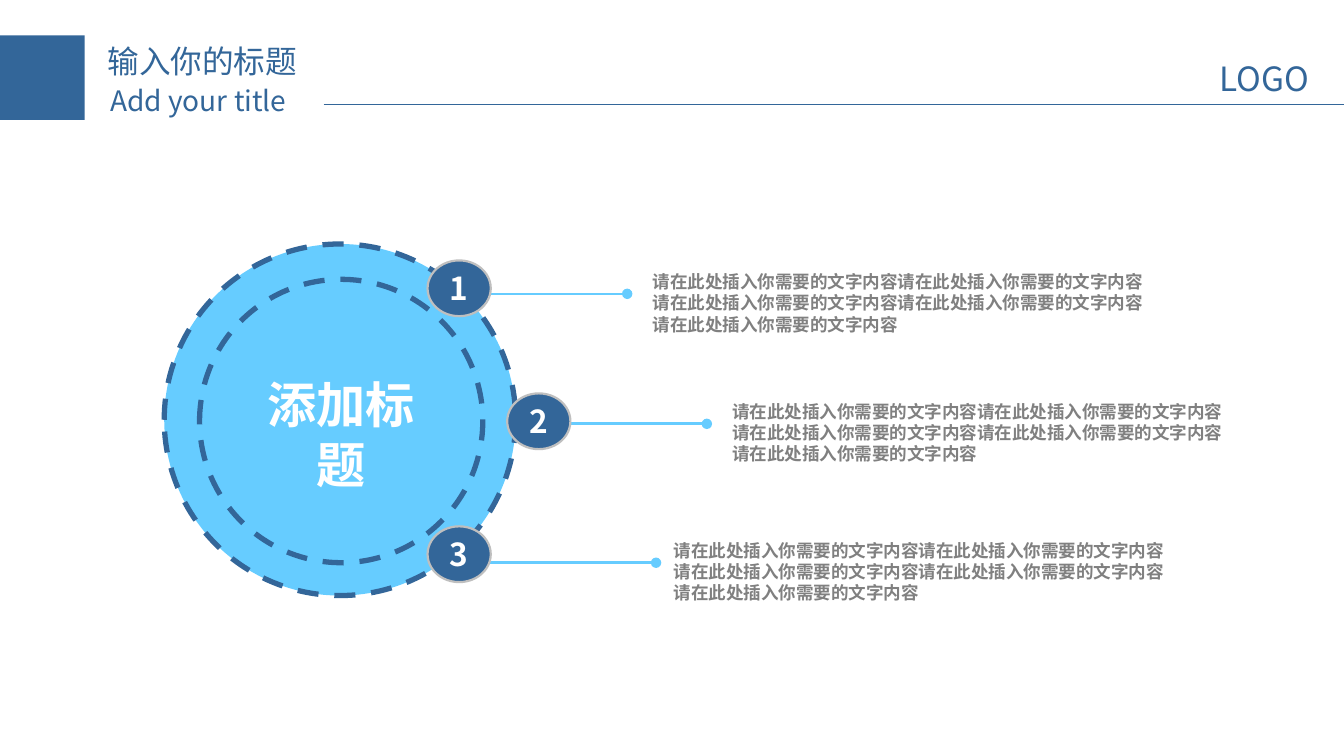
from pptx import Presentation, util as u
from pptx.dml.color import RGBColor
from pptx.enum import dml, shapes, text
from pptx.oxml.ns import qn
from lxml import etree

NAVY = RGBColor(0x33, 0x66, 0x99)
SKY = RGBColor(0x66, 0xCC, 0xFF)
GREY = RGBColor(0x80, 0x80, 0x80)
SILVER = RGBColor(0xBF, 0xBF, 0xBF)
WHITE = RGBColor(0xFF, 0xFF, 0xFF)

SLIDE_W, SLIDE_H = 27, 15
BADGE_W, BADGE_H = 1.27, 1.12
BODY = "请在此处插入你需要的文字内容" * 5

# badge left, badge top, line left, line right, line height, text left
ITEMS = [
    (8.59, 5.23, 8.71, 12.6, 5.9, 13.11),
    (10.19, 7.9, 10.31, 14.2, 8.51, 14.71),
    (8.59, 10.57, 9.3, 13.18, 11.3, 13.54),
]


class Deck:
    heading_font = "Noto Sans CJK SC"
    body_font = "Arial"

    def __init__(self, slide):
        self.shapes = slide.shapes

    def style(self, frame, words, size, color, font, bold=False, center=False):
        paragraph = frame.paragraphs[0]
        run = paragraph.add_run()
        run.text = words
        paragraph.font.size = u.Pt(size)
        paragraph.font.bold = bold
        paragraph.font.name = font
        paragraph.font.color.rgb = color
        # East Asian characters take their typeface from a separate element
        east_asian = etree.SubElement(run.font._element, qn("a:ea"))
        east_asian.set("typeface", self.heading_font)
        if center:
            paragraph.alignment = text.PP_ALIGN.CENTER
        return paragraph

    def label(self, words, left, top, width, height, size, color,
              font=heading_font, wrap=True, inset=True, leading=None, **looks):
        box = self.shapes.add_textbox(u.Cm(left), u.Cm(top), u.Cm(width), u.Cm(height))
        frame = box.text_frame
        frame.word_wrap = wrap
        if not inset:
            frame.margin_left = frame.margin_right = 0
            frame.margin_top = frame.margin_bottom = 0
        paragraph = self.style(frame, words, size, color, font, **looks)
        if leading:
            paragraph.line_spacing = u.Pt(leading)

    def shape(self, kind, left, top, width, height, fill=None,
              line=None, weight=0, dashed=False):
        item = self.shapes.add_shape(kind, u.Cm(left), u.Cm(top), u.Cm(width), u.Cm(height))
        item.shadow.inherit = False
        if fill is None:
            item.fill.background()
        else:
            item.fill.solid()
            item.fill.fore_color.rgb = fill
        if line is None:
            item.line.fill.background()
        else:
            item.line.color.rgb = line
            item.line.width = u.Pt(weight)
        if dashed:
            item.line.dash_style = dml.MSO_LINE.DASH
        return item

    def ring(self, left, top, size, fill=None):
        self.shape(shapes.MSO_SHAPE.OVAL, left, top, size, size, fill, NAVY, 3, dashed=True)

    def badge(self, number, left, top):
        oval = self.shape(shapes.MSO_SHAPE.OVAL, left, top, BADGE_W, BADGE_H,
                          NAVY, SILVER, 1.25)
        oval.text_frame.vertical_anchor = text.MSO_ANCHOR.MIDDLE
        self.style(oval.text_frame, str(number), 18, WHITE, self.heading_font,
                   bold=True, center=True)

    def rule(self, start, end, y, color, weight, dot=False):
        """Draw a horizontal line, with a round dot at its start if asked."""
        line = self.shapes.add_connector(shapes.MSO_CONNECTOR.STRAIGHT,
                                         u.Cm(start), u.Cm(y), u.Cm(end), u.Cm(y))
        line.line.color.rgb = color
        line.line.width = u.Pt(weight)
        if dot:
            head = etree.SubElement(line.line._get_or_add_ln(), qn("a:headEnd"))
            head.set("type", "oval")
        etree.SubElement(line._element.spPr, qn("a:effectLst"))


def main():
    prs = Presentation()
    prs.slide_width, prs.slide_height = u.Cm(SLIDE_W), u.Cm(SLIDE_H)
    deck = Deck(prs.slides.add_slide(prs.slide_layouts[6]))

    deck.shape(shapes.MSO_SHAPE.RECTANGLE, 0, 0.71, 1.7, 1.7, NAVY)
    deck.label("输入你的标题", 1.91, 0.71, 4.4, 1.02, 18, NAVY)
    deck.label("Add your title", 1.97, 1.55, 4.4, 0.94, 16, NAVY)
    deck.rule(6.5, SLIDE_W, 2.1, NAVY, 0.75)
    deck.label("LOGO", 24.25, 1.04, 2.44, 1.07, 19, NAVY, wrap=False)

    for _, _, line_left, line_right, y, _ in ITEMS:
        deck.rule(line_right, line_left, y, SKY, 1.5, dot=True)

    deck.ring(3.3, 4.9, 7.06, SKY)
    deck.label("添加标题", 5.31, 7.5, 3.1, 2.36, 28, WHITE,
               inset=False, leading=34, bold=True, center=True)
    for number, (left, top, _, _, y, text_left) in enumerate(ITEMS, 1):
        deck.badge(number, left, top)
        deck.label(BODY, text_left, y - 0.45, 10, 1.27, 10, GREY, deck.body_font,
                   inset=False, leading=12, bold=True)
    deck.ring(4.01, 5.61, 5.69)

    prs.save("out.pptx")


if __name__ == "__main__":
    main()
